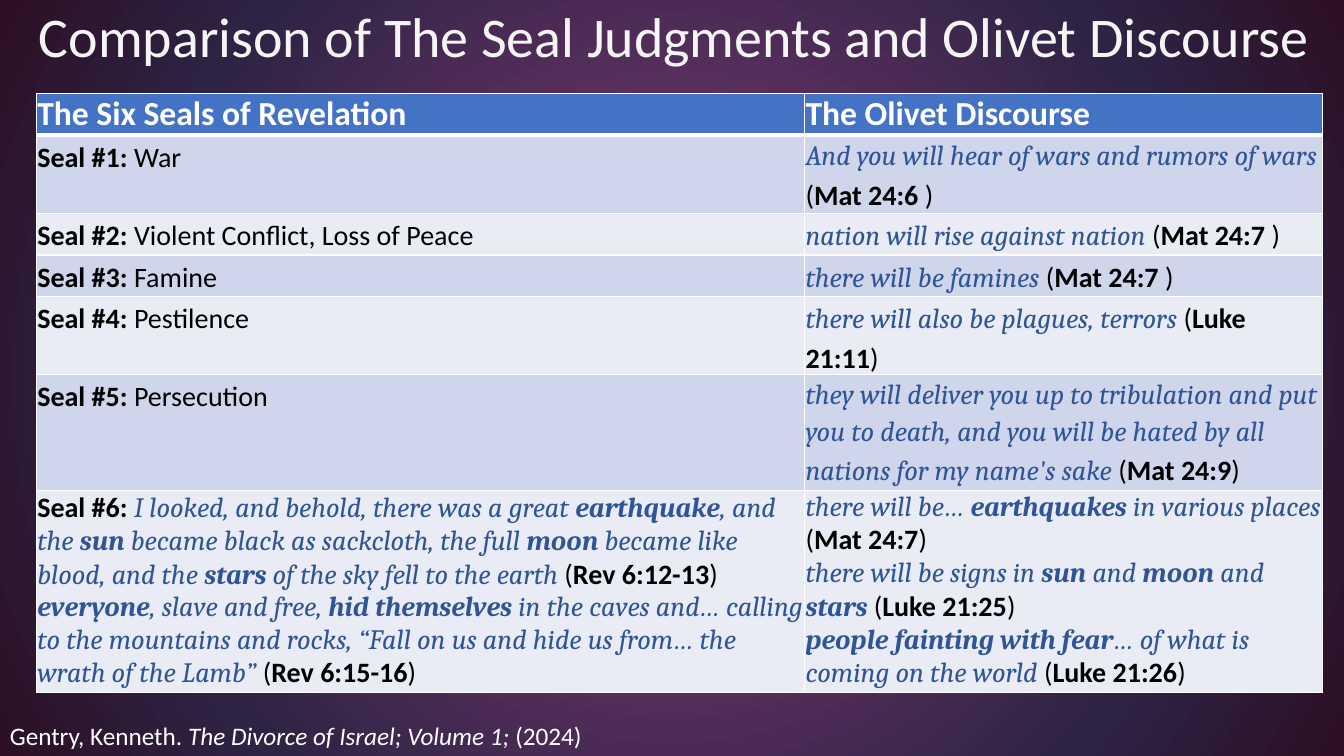
from pptx import Presentation
from pptx.dml.color import RGBColor
from pptx.enum.text import MSO_ANCHOR as ANCHOR, PP_ALIGN as ALIGN
from pptx.oxml import parse_xml
from pptx.oxml.ns import nsdecls
from pptx.util import Inches, Pt

WHITE, BLACK, QUOTE = "FFFFFF", "000000", "2F5597"
HEADER, BANDS = "4472C4", ("E9EBF5", "CFD5EA")
BACKDROP = ((0, "883D7C"), (71, "2E2344"), (100, "2C0F24"))
COLUMNS = (7.62, 5.14)
HEADINGS = ("The Six Seals of Revelation", "The Olivet Discourse")

# Markup: _quotation_ and *bold*; each row is height, line spacing, left, right.
SEALS = (
    (0.77, 1.17, ["*Seal #1: *War"],
     ["_And you will hear of wars and rumors of wars _(*Mat 24:6* )"]),
    (0.41, 1.15, ["*Seal #2: *Violent Conflict, Loss of Peace"],
     ["_nation will rise against nation _(*Mat 24:7* )"]),
    (0.41, 1.17, ["*Seal #3: *Famine"],
     ["_there will be famines _(*Mat 24:7* )"]),
    (0.77, 1.17, ["*Seal #4: *Pestilence"],
     ["_there will also be plagues, terrors_ (*Luke 21:11*)"]),
    (1.15, 1.15, ["*Seal #5: *Persecution"],
     ["_they will deliver you up to tribulation and put you to death, and you "
      "will be hated by all nations for my name's sake _(*Mat 24:9*)"]),
    (2.0, 1.0,
     ["*Seal #6: *_I looked, and behold, there was a great *earthquake*, and "
      "the *sun* became black as sackcloth, the full *moon* became like blood, "
      "and the *stars* of the sky fell to the earth _(*Rev 6:12-13*)",
      "_*everyone*, slave and free, *hid themselves *in the caves and… calling "
      "to the mountains and rocks, “Fall on us and hide us from… the wrath of "
      "the Lamb” _(*Rev 6:15-16*)"],
     ["_there will be… *earthquakes* in various places _(*Mat 24:7*)",
      "_there will be signs in *sun* and *moon* and *stars *_(*Luke 21:25*)",
      "_*people fainting with fear*… of what is coming on the world_ "
      "(*Luke 21:26*)"]),
)


def rgb(value):
    """Turn a hex string into a colour."""
    return RGBColor.from_string(value)


def add_run(p, text, size, color, bold=False, italic=False, font="Calibri"):
    """Append one formatted run to a paragraph."""
    r = p.add_run()
    r.text = text
    r.font.name, r.font.size = font, Pt(size)
    r.font.bold, r.font.italic = bold, italic
    r.font.color.rgb = rgb(color)


def add_marked_text(p, text, size):
    """Append runs from text marked with _quotation_ and *bold*."""
    for i, part in enumerate(text.split("_")):
        quoted = i % 2 == 1
        color, font = (QUOTE, "Cambria") if quoted else (BLACK, "Calibri")
        for j, piece in enumerate(part.split("*")):
            if piece:
                add_run(p, piece, size, color, j % 2 == 1, quoted, font)


def add_box(s, left, top, width, height, anchor=ANCHOR.TOP):
    """Add a wrapping text box and return its first paragraph."""
    tf = s.shapes.add_textbox(*map(Inches, (left, top, width, height))).text_frame
    tf.word_wrap = True
    tf.vertical_anchor = anchor
    return tf.paragraphs[0]


def set_background(s):
    """Give the slide a gradient that spreads from its centre."""
    stops = "".join(f'<a:gs pos="{pos * 1000}"><a:srgbClr val="{color}"/></a:gs>'
                    for pos, color in BACKDROP)
    s.element.cSld.insert(0, parse_xml(
        f'<p:bg {nsdecls("p", "a")}><p:bgPr><a:gradFill rotWithShape="1">'
        f'<a:gsLst>{stops}</a:gsLst><a:path path="circle">'
        '<a:fillToRect l="50000" t="50000" r="50000" b="50000"/></a:path>'
        '</a:gradFill><a:effectLst/></p:bgPr></p:bg>'))


def style_cell(cell, fill, top=1, bottom=1):
    """Set the borders, fill and margins of a cell."""
    for side, width in zip("LRTB", (1, 1, top, bottom)):
        cell._tc.get_or_add_tcPr().append(parse_xml(
            f'<a:ln{side} {nsdecls("a")} w="{Pt(width)}"><a:solidFill>'
            f'<a:srgbClr val="{WHITE}"/></a:solidFill></a:ln{side}>'))
    cell.fill.solid()
    cell.fill.fore_color.rgb = rgb(fill)
    cell.margin_left = cell.margin_right = Inches(0.01)
    cell.margin_top = cell.margin_bottom = 0


def fill_cell(cell, texts, spacing):
    """Write one paragraph for each marked text."""
    tf = cell.text_frame
    for i, text in enumerate(texts):
        p = tf.add_paragraph() if i else tf.paragraphs[0]
        p.line_spacing = spacing
        add_marked_text(p, text, 20)


def add_comparison(s):
    """Add the table of seals and matching passages."""
    heights = [0.41] + [seal[0] for seal in SEALS]
    table = s.shapes.add_table(
        len(heights), len(COLUMNS), Inches(0.36), Inches(0.93),
        Inches(sum(COLUMNS)), Inches(sum(heights))).table
    for column, width in zip(table.columns, COLUMNS):
        column.width = Inches(width)
    for row, height in zip(table.rows, heights):
        row.height = Inches(height)
    for cell, heading in zip(table.rows[0].cells, HEADINGS):
        style_cell(cell, HEADER, bottom=3)
        cell.vertical_anchor = ANCHOR.BOTTOM
        add_run(cell.text_frame.paragraphs[0], heading, 24, WHITE, bold=True)
    for i, (_, spacing, *sides) in enumerate(SEALS, 1):
        for cell, texts in zip(table.rows[i].cells, sides):
            style_cell(cell, BANDS[i % 2], top=3 if i == 1 else 1)
            fill_cell(cell, texts, spacing)


def main():
    """Build and save the slide."""
    prs = Presentation()
    prs.slide_width, prs.slide_height = Inches(13.33), Inches(7.5)
    s = prs.slides.add_slide(prs.slide_layouts[6])
    set_background(s)
    p = add_box(s, 0, 0, 13.37, 0.79, ANCHOR.MIDDLE)
    p.alignment, p.line_spacing = ALIGN.CENTER, 0.9
    add_run(p, "Comparison of The Seal Judgments and Olivet Discourse", 40, "F5F5F5")
    p = add_box(s, 0, 7.1, 13.33, 0.4)
    add_run(p, "Gentry, Kenneth. ", 18, WHITE)
    add_run(p, "The Divorce of Israel; Volume 1; ", 18, WHITE, italic=True)
    add_run(p, "(2024)", 18, WHITE)
    add_comparison(s)
    prs.save("out.pptx")


if __name__ == "__main__":
    main()
